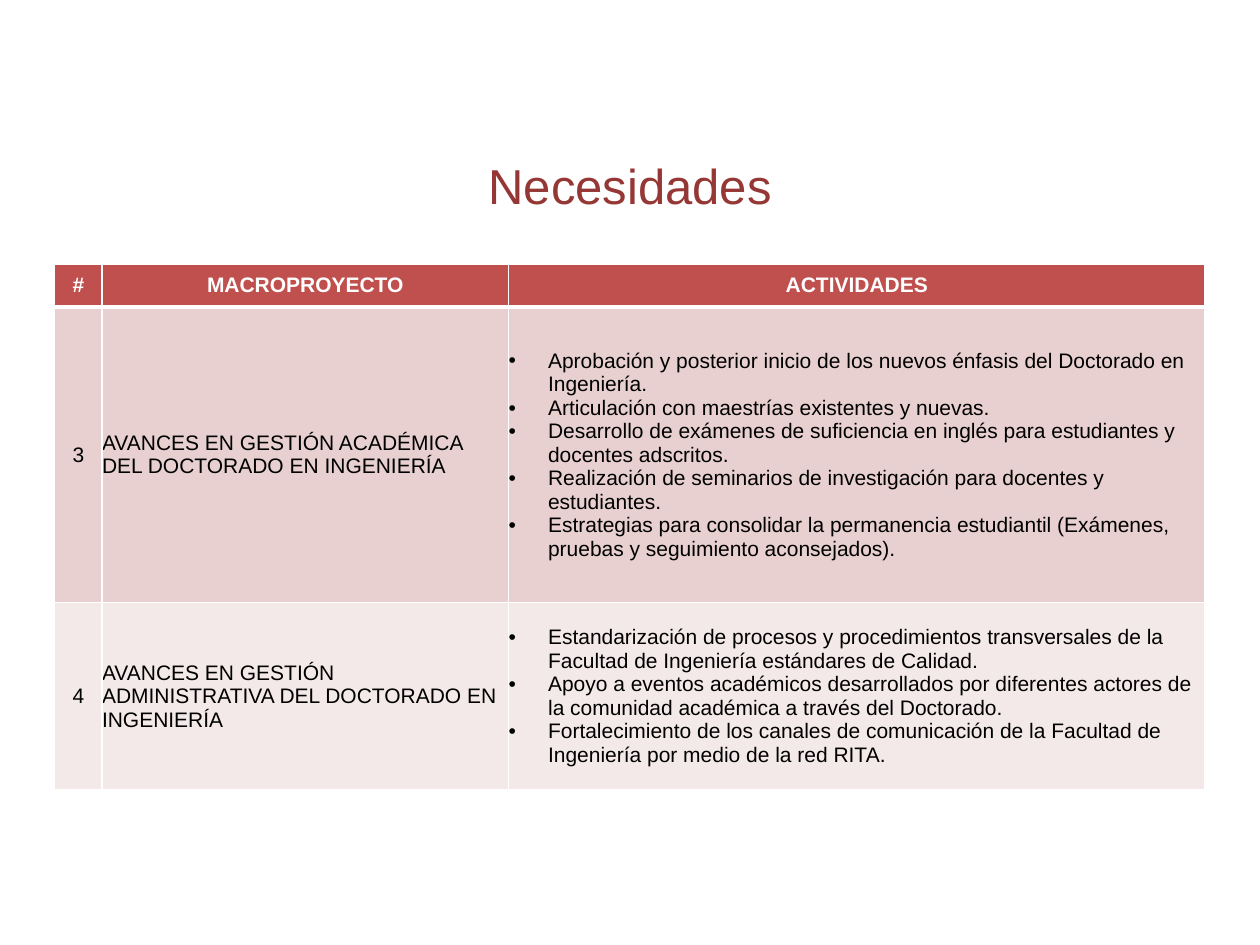
from lxml.etree import SubElement
from pptx import Presentation
from pptx.dml.color import RGBColor
from pptx.enum.text import MSO_ANCHOR, PP_ALIGN
from pptx.oxml.ns import qn
from pptx.util import Pt

TITLE = "Necesidades"
HEADER = ("#", "MACROPROYECTO", "ACTIVIDADES")
PROJECTS = [
    ("3", "AVANCES EN GESTIÓN ACADÉMICA DEL DOCTORADO EN INGENIERÍA", [
        "Aprobación y posterior inicio de los nuevos énfasis del Doctorado en Ingeniería.",
        "Articulación con maestrías existentes y nuevas.",
        "Desarrollo de exámenes de suficiencia en inglés para estudiantes y docentes adscritos.",
        "Realización de seminarios de investigación para docentes y estudiantes.",
        "Estrategias para consolidar la permanencia estudiantil "
        "(Exámenes, pruebas y seguimiento aconsejados).",
    ]),
    ("4", "AVANCES EN GESTIÓN ADMINISTRATIVA DEL DOCTORADO EN INGENIERÍA", [
        "Estandarización de procesos y procedimientos transversales de la Facultad de "
        "Ingeniería estándares de Calidad.",
        "Apoyo a eventos académicos desarrollados por diferentes actores de la comunidad "
        "académica a través del Doctorado.",
        "Fortalecimiento de los canales de comunicación de la Facultad de Ingeniería por "
        "medio de la red RITA.",
    ]),
]

FONT = "Arial"
WHITE = RGBColor(0xFF, 0xFF, 0xFF)
BLACK = RGBColor(0, 0, 0)
TITLE_RED = RGBColor(0x95, 0x37, 0x35)
HEADER_RED = RGBColor(0xC0, 0x50, 0x4D)
ROW_FILLS = (RGBColor(0xE8, 0xD0, 0xD0), RGBColor(0xF4, 0xE9, 0xE9))

COL_WIDTHS = (27.1, 232.4, 397.9)
ROW_HEIGHTS = (24.4, 169, 107)
INDENT = Pt(22.5)


def add_text(p, text, size, color, bold=False):
    r = p.add_run()
    r.text = text
    r.font.name, r.font.size, r.font.bold = FONT, Pt(size), bold
    r.font.color.rgb = color


def add_bullet(p):
    pPr = p._p.get_or_add_pPr()
    pPr.set("marL", str(INDENT))
    pPr.set("indent", str(-INDENT))
    SubElement(pPr, qn("a:buFont")).set("typeface", FONT)
    SubElement(pPr, qn("a:buChar")).set("char", "•")


def add_borders(cell, **widths):
    """Draw white cell borders; widths are in points, keyed by side L, R, T, B."""
    tcPr = cell._tc.get_or_add_tcPr()
    for side, width in widths.items():
        ln = SubElement(tcPr, qn(f"a:ln{side}"))
        ln.set("w", str(Pt(width)))
        fill = SubElement(ln, qn("a:solidFill"))
        SubElement(fill, qn("a:srgbClr")).set("val", str(WHITE))


def fill_cell(cell, content, row, col):
    header = row == 0
    add_borders(cell, L=1, R=1, T=3 if row == 1 else 1, B=3 if header else 1)
    cell.fill.solid()
    cell.fill.fore_color.rgb = HEADER_RED if header else ROW_FILLS[row - 1]
    cell.margin_left = cell.margin_right = cell.margin_top = cell.margin_bottom = 0
    cell.vertical_anchor = MSO_ANCHOR.MIDDLE
    tf = cell.text_frame
    bulleted = isinstance(content, list)
    for i, text in enumerate(content if bulleted else [content]):
        p = tf.add_paragraph() if i else tf.paragraphs[0]
        p.alignment = PP_ALIGN.CENTER if header or col == 0 else PP_ALIGN.LEFT
        if bulleted:
            add_bullet(p)
        add_text(p, text, 12, WHITE if header else BLACK, header)


prs = Presentation()
prs.slide_width, prs.slide_height = Pt(720), Pt(540)
s = prs.slides.add_slide(prs.slide_layouts[6])

tf = s.shapes.add_textbox(Pt(36), Pt(60.5), Pt(648), Pt(90)).text_frame
tf.word_wrap = True
tf.vertical_anchor = MSO_ANCHOR.MIDDLE
tf.paragraphs[0].alignment = PP_ALIGN.CENTER
add_text(tf.paragraphs[0], TITLE, 28, TITLE_RED)

rows = [HEADER, *PROJECTS]
table = s.shapes.add_table(len(rows), len(HEADER), Pt(31.2), Pt(151),
                           Pt(sum(COL_WIDTHS)), Pt(sum(ROW_HEIGHTS))).table
for column, width in zip(table.columns, COL_WIDTHS):
    column.width = Pt(width)
for table_row, height in zip(table.rows, ROW_HEIGHTS):
    table_row.height = Pt(height)
for i, row in enumerate(rows):
    for j, content in enumerate(row):
        fill_cell(table.cell(i, j), content, i, j)

prs.save("out.pptx")
